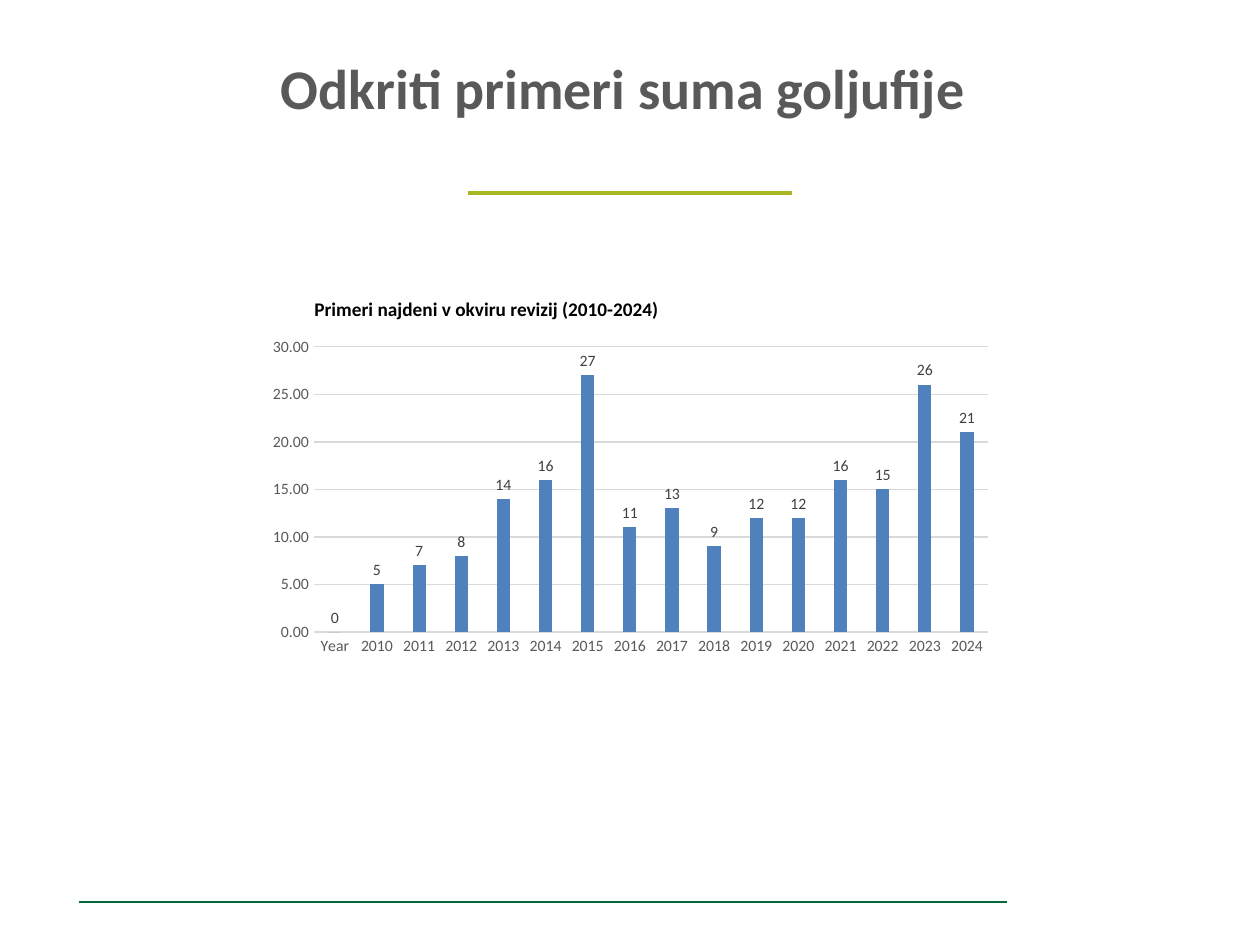
from lxml.etree import SubElement
from pptx import Presentation
from pptx.chart.data import CategoryChartData
from pptx.dml.color import RGBColor
from pptx.enum.chart import XL_CHART_TYPE, XL_LABEL_POSITION, XL_TICK_MARK
from pptx.enum.shapes import MSO_CONNECTOR
from pptx.enum.text import MSO_ANCHOR, MSO_AUTO_SIZE, PP_ALIGN
from pptx.oxml.ns import qn
from pptx.util import Emu, Pt

PX_PER_INCH = 126
FONT = "Calibri"
COLORS = {
    "title": "595959",
    "axis": "595959",
    "label": "404040",
    "text": "000000",
    "grid": "D9D9D9",
    "bar": "4F81BD",
    "accent": "A8B621",
    "footer": "026938",
}
CASES = [0, 5, 7, 8, 14, 16, 27, 11, 13, 9, 12, 12, 16, 15, 26, 21]
YEARS = ["Year"] + [str(year) for year in range(2010, 2025)]


def px(length):
    """Turn pixels into EMU."""
    return Emu(round(length * 914400 / PX_PER_INCH))


def color(name):
    """Look up a named colour."""
    return RGBColor.from_string(COLORS[name])


def style_font(font, size, name, bold=False):
    """Set the typeface, size, colour and weight of a font."""
    font.name = FONT
    font.size = Pt(size)
    font.bold = bold
    font.color.rgb = color(name)


def style_line(line, name, width):
    """Set the colour and width of a line."""
    line.color.rgb = color(name)
    line.width = Pt(width)


def add_rule(page, left, top, width, name, weight):
    """Draw a horizontal rule without a shadow."""
    rule = page.shapes.add_connector(
        MSO_CONNECTOR.STRAIGHT, px(left), px(top), px(left + width), px(top)
    )
    style_line(rule.line, name, weight)
    SubElement(rule._element.spPr, qn("a:effectLst"))


def fill_title(page, left, top, width, height):
    """Place the slide title in its placeholder."""
    box = page.shapes.title
    box.left, box.top, box.width, box.height = map(px, (left, top, width, height))
    frame = box.text_frame
    frame.auto_size = MSO_AUTO_SIZE.NONE
    frame.vertical_anchor = MSO_ANCHOR.MIDDLE
    frame.margin_left = frame.margin_right = 0
    frame.margin_top = frame.margin_bottom = 0
    para = frame.paragraphs[0]
    para.alignment = PP_ALIGN.CENTER
    para.line_spacing = 0.9
    span = para.add_run()
    span.text = "Odkriti primeri suma goljufije "
    style_font(span.font, 32, "title", bold=True)


def add_caption(page, left, top, width, height):
    """Write the heading above the chart."""
    box = page.shapes.add_textbox(*map(px, (left, top, width, height)))
    frame = box.text_frame
    frame.word_wrap = True
    frame.auto_size = MSO_AUTO_SIZE.SHAPE_TO_FIT_TEXT
    span = frame.paragraphs[0].add_run()
    span.text = "Primeri najdeni v okviru revizij (2010-2024)"
    style_font(span.font, 11, "text", bold=True)


def style_axes(chart):
    """Format the category and value axes with light gridlines."""
    for axis in (chart.category_axis, chart.value_axis):
        axis.major_tick_mark = axis.minor_tick_mark = XL_TICK_MARK.NONE
        style_font(axis.tick_labels.font, 9, "axis")
    style_line(chart.category_axis.format.line, "grid", 0.75)
    values = chart.value_axis
    values.minimum_scale, values.maximum_scale, values.major_unit = 0, 30, 5
    values.tick_labels.number_format = "0.00"
    values.tick_labels.number_format_is_linked = False
    values.format.line.fill.background()
    style_line(values.major_gridlines.format.line, "grid", 0.75)


def add_case_chart(page, left, top, width, height):
    """Chart the cases found in each year."""
    data = CategoryChartData()
    data.categories = YEARS
    data.add_series("Series 1", CASES)
    chart = page.shapes.add_chart(
        XL_CHART_TYPE.COLUMN_CLUSTERED, *map(px, (left, top, width, height)), data
    ).chart
    chart.has_title = chart.has_legend = False
    style_font(chart.font, 10, "text")
    style_axes(chart)
    plot = chart.plots[0]
    plot.vary_by_categories = False
    plot.gap_width, plot.overlap = 219, -27
    bars = plot.series[0]
    bars.format.fill.solid()
    bars.format.fill.fore_color.rgb = color("bar")
    labels = bars.data_labels
    labels.show_value = True
    labels.number_format = "0"
    labels.number_format_is_linked = False
    labels.position = XL_LABEL_POSITION.OUTSIDE_END
    style_font(labels.font, 9, "label")


def main():
    """Build the slide and save the deck."""
    deck = Presentation()
    deck.slide_width, deck.slide_height = px(1260), px(945)
    page = deck.slides.add_slide(deck.slide_layouts[5])
    add_rule(page, 79, 902, 928, "footer", 0.75)
    fill_title(page, 74, 62, 1111, 59)
    add_rule(page, 468, 193, 324, "accent", 2.25)
    add_caption(page, 302, 291, 662, 37)
    add_case_chart(page, 258, 331, 745, 331)
    deck.save("out.pptx")


if __name__ == "__main__":
    main()
